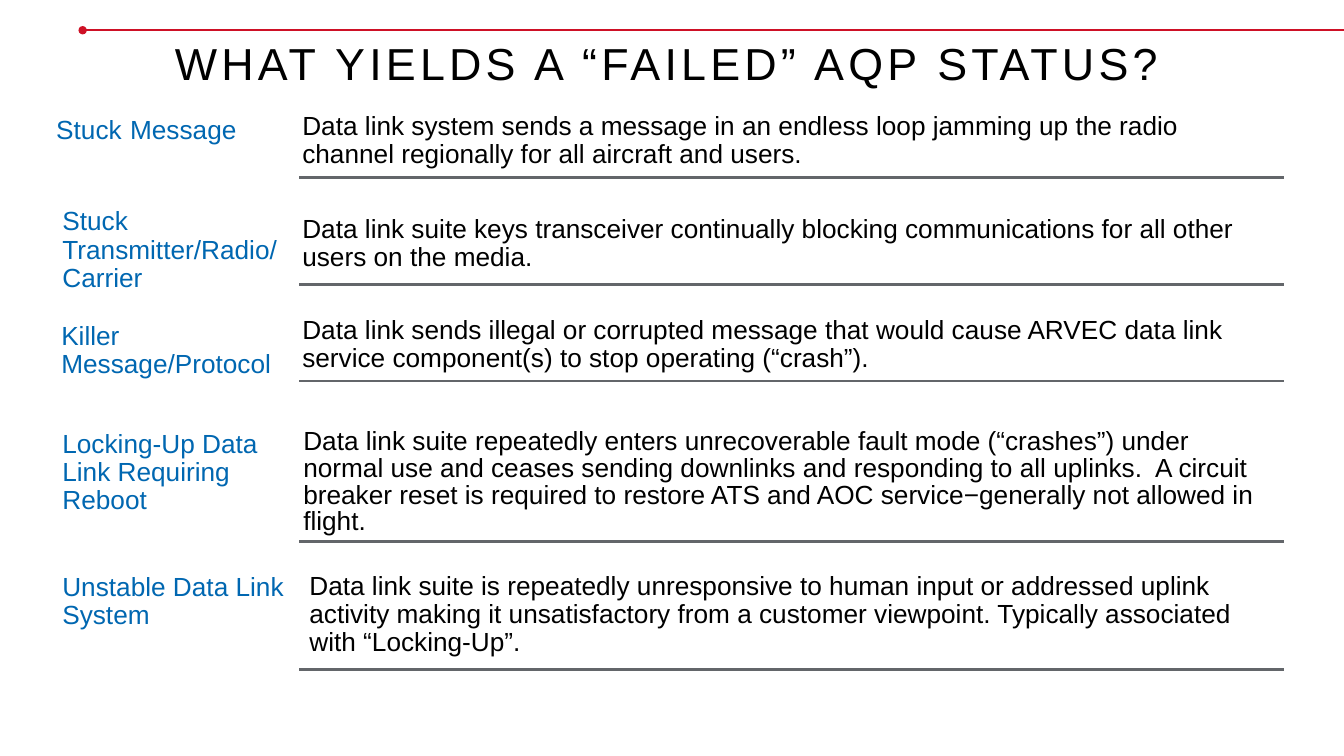
import pptx
import pptx.dml.color
import pptx.enum.shapes
import pptx.enum.text
import pptx.oxml.xmlchemy
import pptx.util

CELL = pptx.util.Inches(0.1)
COLS, ROWS = 133.3, 75
LEFT, WIDTH, INDENT = 5.2, 122.2, 24.5
TOP = 10
SIZE, GAP = 18.7, 21.3
BLACK, BLUE, GREY, RED = "000000", "0067B1", "63666A", "CE1126"

FAULTS = [
    (17.6, (-0.6, 0.3, 24.4, 4.6), (-0.7, 0.2, 95.9, 8.7), 0.9,
     [["Stuck", " ", "Message"]],
     "Data link system sends a message in an endless loop jamming up the radio "
     "channel regionally for all aircraft and users."),
    (28.2, (0, 1.7, 23.9, 12.5), (-0.7, 2.8, 95.9, 11.4), 0.9,
     [["Stuck", " ", "Transmitter/Radio/"], ["Carrier"]],
     "Data link suite keys transceiver continually blocking communications for "
     "all other users on the media."),
    (37.8, (-0.1, 2.8, 25.4, 12.2), (-0.7, 2.2, 95.9, 8.7), 0.9,
     [["Killer Message/Protocol"]],
     "Data link sends illegal or corrupted message that would cause ARVEC data "
     "link service component(s) to stop operating (“crash”)."),
    (53.7, (0, 3.9, 25.2, 12.5), (-0.6, 3.8, 96.4, 11.7), 0.85,
     [["Locking-Up Data Link Requiring Reboot"]],
     "Data link suite repeatedly enters unrecoverable fault mode (“crashes”) "
     "under normal use and ceases sending downlinks and responding to all "
     "uplinks.  A circuit breaker reset is required to restore ATS and AOC "
     "service−generally not allowed in flight."),
    (66.4, (0, 2.2, 26.3, 12.5), (0, 2.1, 96.7, 11.4), 0.9,
     [["Unstable Data Link System"]],
     "Data link suite is repeatedly unresponsive to human input or addressed "
     "uplink activity making it unsatisfactory from a customer viewpoint. "
     "Typically associated with “Locking-Up”."),
]


def cells(*spans):
    return [round(span * CELL) for span in spans]


def paint(color, code):
    color.rgb = pptx.dml.color.RGBColor.from_string(code)


def rule(slide, left, right, y, code, width):
    line = slide.shapes.add_connector(
        pptx.enum.shapes.MSO_CONNECTOR.STRAIGHT, *cells(left, y, right, y))
    paint(line.line.color, code)
    line.line.width = pptx.util.Pt(width)
    props = line._element.spPr
    props.append(pptx.oxml.xmlchemy.OxmlElement("a:effectLst"))
    return line


def write(slide, box, paras, code, size=SIZE, space=0.9, inset=(1, 1)):
    frame = slide.shapes.add_textbox(*cells(*box)).text_frame
    frame.word_wrap = True
    frame.margin_left = frame.margin_right = cells(inset[0])[0]
    frame.margin_top = frame.margin_bottom = cells(inset[1])[0]
    for i, parts in enumerate(paras):
        para = frame.add_paragraph() if i else frame.paragraphs[0]
        para.line_spacing = space
        para.font.name = "Arial"
        para.font.size = pptx.util.Pt(size)
        paint(para.font.color, code)
        for part in parts:
            run = para.add_run()
            run.text = part
            if part == " ":
                run.font.size = pptx.util.Pt(GAP)
    return frame


def header(slide, box):
    left, top, width, height = box
    line = rule(slide, left + 8.2, left + width, top + 3, RED, 1.5)
    head = pptx.oxml.xmlchemy.OxmlElement("a:headEnd")
    head.set("type", "oval")
    line.line._get_or_add_ln().append(head)
    frame = write(slide, (left - 0.5, top + 4, width, height - 4),
                  [["WHAT YIELDS A “FAILED” AQP STATUS?"]],
                  BLACK, 32, 0.8, (1.3, 0.7))
    frame.vertical_anchor = pptx.enum.text.MSO_ANCHOR.MIDDLE
    para = frame.paragraphs[0]
    para.alignment = pptx.enum.text.PP_ALIGN.CENTER
    para.runs[0]._r.get_or_add_rPr().set("spc", "300")


def fault(slide, box, label, body, space, name, text):
    left, top, width, height = box
    start = left + INDENT
    write(slide, (left + label[0], top + label[1], *label[2:]), name, BLUE)
    write(slide, (start + body[0], top + body[1], *body[2:]), [[text]],
          BLACK, space=space)
    rule(slide, start, left + width, top + height, GREY, 2)


def main():
    deck = pptx.Presentation()
    deck.slide_width, deck.slide_height = cells(COLS, ROWS)
    slide = deck.slides.add_slide(deck.slide_layouts[6])
    header(slide, (0, 0, COLS, 9.5))
    top = TOP
    for end, *parts in FAULTS:
        fault(slide, (LEFT, top, WIDTH, end - top), *parts)
        top = end
    deck.save("out.pptx")


if __name__ == "__main__":
    main()
